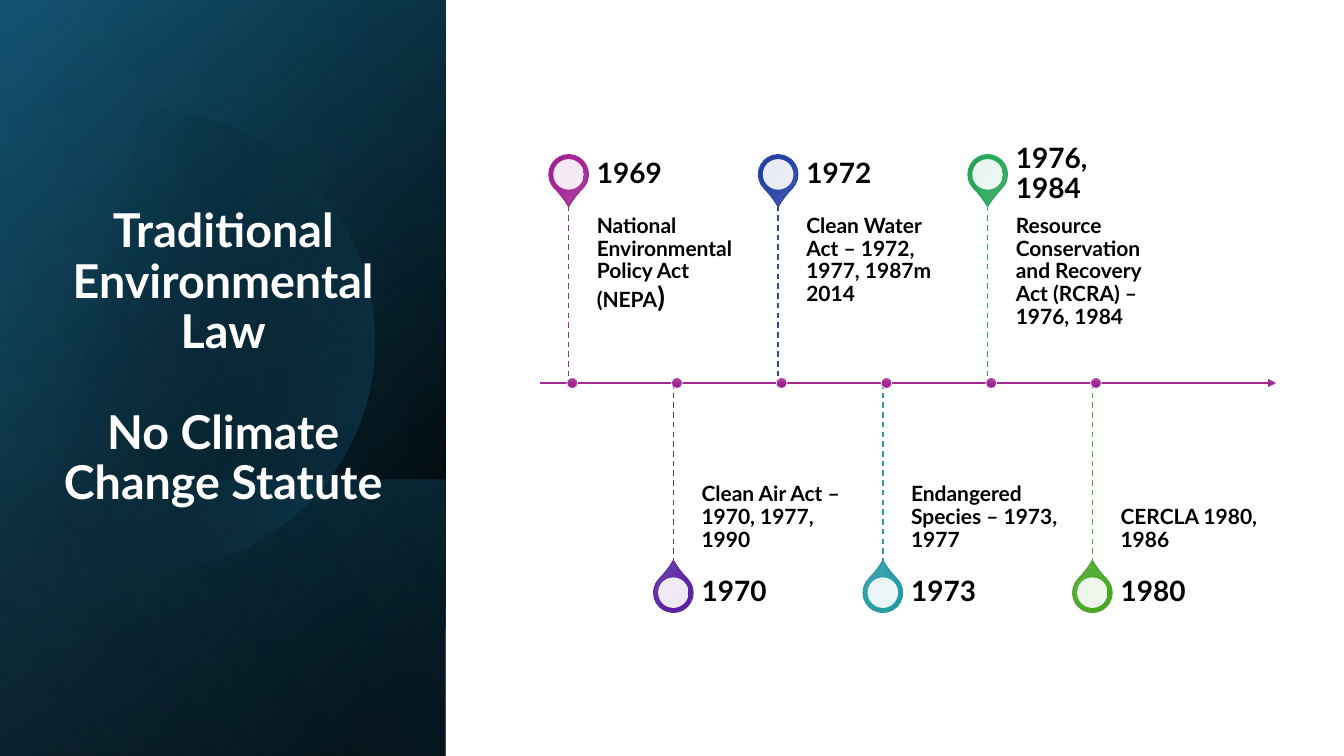
from math import acos, cos, sin

from lxml.etree import SubElement
from pptx import Presentation
from pptx.dml.color import RGBColor
from pptx.enum.dml import MSO_LINE
from pptx.enum.shapes import MSO_CONNECTOR, MSO_SHAPE
from pptx.enum.text import MSO_ANCHOR, PP_ALIGN
from pptx.oxml import parse_xml
from pptx.oxml.ns import nsdecls, qn
from pptx.util import Cm, Pt

FONT = "Lato"
BLACK = RGBColor(0x00, 0x00, 0x00)
WHITE = RGBColor(0xFF, 0xFF, 0xFF)
NAVY = RGBColor(0x10, 0x48, 0x62)
TEAL_BLUE = RGBColor(0x15, 0x60, 0x82)
SKY = RGBColor(0x46, 0xB1, 0xE1)
# Each set: line colour, then light, middle and dark gradient colours
MAGENTA = [RGBColor.from_string(c) for c in ("A02B93", "AC53A0", "A62598", "991C8B")]
PURPLE = [RGBColor.from_string(c) for c in ("5F2CA1", "7353AD", "5E26A7", "531C9A")]
BLUE = [RGBColor.from_string(c) for c in ("2C49A3", "5363AF", "2645A9", "1D3B9B")]
TURQUOISE = [RGBColor.from_string(c) for c in ("2D9AA4", "53A7B0", "279FAA", "1D929D")]
GREEN = [RGBColor.from_string(c) for c in ("2DA65F", "54B173", "27AC5E", "1E9E52")]
LIME = [RGBColor.from_string(c) for c in ("4EA72E", "66B354", "4BAD28", "409F1E")]


def paint(shape, stops, angle):
    """Give a shape a linear gradient of (position, colour, opacity), no line, no shadow."""
    shape.shadow.inherit = False
    shape.line.fill.background()
    shape.fill.background()
    stop_xml = "".join(
        f'<a:gs pos="{position * 1000}"><a:srgbClr val="{color}">'
        f'<a:alpha val="{opacity * 1000}"/></a:srgbClr></a:gs>'
        for position, color, opacity in stops)
    gradient = parse_xml(
        f'<a:gradFill {nsdecls("a")} rotWithShape="1"><a:gsLst>{stop_xml}</a:gsLst>'
        f'<a:lin ang="{angle * 60000}" scaled="0"/></a:gradFill>')
    properties = shape.element.spPr
    properties.replace(properties.find(qn("a:noFill")), gradient)


def add_label(left, top, height, insets, anchor, text, size):
    """Add a timeline text box and return its paragraph."""
    frame = timeline.add_textbox(Cm(left), Cm(top), Cm(3.91), Cm(height)).text_frame
    frame.word_wrap = True
    frame.vertical_anchor = anchor
    frame.margin_left = 0
    frame.margin_top, frame.margin_right, frame.margin_bottom = [Cm(i) for i in insets]
    paragraph = frame.paragraphs[0]
    paragraph.add_run().text = text
    paragraph.line_spacing = 0.9
    paragraph.font.name, paragraph.font.size, paragraph.font.bold = FONT, Pt(size), True
    paragraph.font.color.rgb = BLACK
    return paragraph


prs = Presentation()
prs.slide_width, prs.slide_height = Cm(33.87), Cm(19.05)
slide = prs.slides.add_slide(prs.slide_layouts[6])

# Left panel: turned rectangles (left, top, width), with a disc under the last one
PANEL_WIDTH = 11.23
full_panel = (-3.91, 3.91, 19.05)
layers = [
    (full_panel, [(8, BLACK, 100), (100, NAVY, 100)], 50),
    (full_panel, [(0, BLACK, 0), (99, TEAL_BLUE, 46)], 30),
    ((2.13, 9.96, 6.96), [(2, TEAL_BLUE, 29), (100, BLACK, 30)], 130),
    (None, [(29, BLACK, 0), (100, TEAL_BLUE, 43)], 14),
    (full_panel, [(0, BLACK, 0), (99, SKY, 11)], 120),
]
disc_x, disc_y, disc_radius = 3.61, 8.59, 5.82
disc_end = acos(-disc_x / disc_radius)  # the disc is cut at the slide edge
disc_angles = [disc_end * step / 60 for step in range(-60, 61)]
disc_points = [(Cm(disc_x + disc_radius * cos(a)), Cm(disc_y + disc_radius * sin(a)))
               for a in disc_angles]
for box, stops, angle in layers:
    if box:
        left, top, width = box
        layer = slide.shapes.add_shape(
            MSO_SHAPE.RECTANGLE, Cm(left), Cm(top), Cm(width), Cm(PANEL_WIDTH))
        layer.rotation = 90
        layer.element.spPr.xfrm.set("flipH", "1")
    else:
        outline = slide.shapes.build_freeform(*disc_points[0])
        outline.add_line_segments(disc_points[1:], close=True)
        layer = outline.convert_to_shape()
    paint(layer, stops, angle)

title = slide.shapes.add_textbox(Cm(1.3), Cm(6.32), Cm(8.66), Cm(6.65)).text_frame
title.word_wrap = True
title.vertical_anchor = MSO_ANCHOR.BOTTOM
title.text = "Traditional Environmental Law\nNo Climate Change Statute"
for paragraph in title.paragraphs:
    paragraph.alignment = PP_ALIGN.CENTER
    paragraph.line_spacing = 0.9
    paragraph.font.name, paragraph.font.size, paragraph.font.bold = FONT, Pt(33.3), True
    paragraph.font.color.rgb = WHITE
title.paragraphs[1].space_before = Pt(36)

# Timeline: events alternate above and below the axis
AXIS_Y, FIRST_X, STEP_X = 9.65, 14.33, 2.64
YEAR_HEIGHT, ACT_HEIGHT = 1.57, 4.5
PIN, WINDOW, DOT = 0.99, 0.77, 0.27
events = [
    ("1969", "National Environmental Policy Act (NEPA", MAGENTA),
    ("1970", "Clean Air Act – 1970, 1977, 1990", PURPLE),
    ("1972", "Clean Water Act – 1972, 1977, 1987m 2014", BLUE),
    ("1973", "Endangered Species – 1973, 1977", TURQUOISE),
    ("1976, 1984", "Resource Conservation and Recovery Act (RCRA) – 1976, 1984", GREEN),
    ("1980", "CERCLA 1980, 1986", LIME),
]
timeline = slide.shapes.add_group_shape().shapes
axis = timeline.add_connector(
    MSO_CONNECTOR.STRAIGHT, Cm(13.61), Cm(AXIS_Y), Cm(32.16), Cm(AXIS_Y))
axis.line.color.rgb = MAGENTA[0]
axis.line.width = Pt(1.5)
SubElement(axis.element.spPr.find(qn("a:ln")), qn("a:tailEnd"), type="triangle")
connectors = [axis]

for index, (year, act, colors) in enumerate(events):
    x = FIRST_X + index * STEP_X
    if index % 2 == 0:
        year_top, act_top, stem_end, turn = 3.61, 5.18, 5.18, 135
        act_insets, act_anchor = (0.25, 0.25, 0.41), MSO_ANCHOR.TOP
    else:
        year_top, act_top, stem_end, turn = 14.15, AXIS_Y, 14.15, 315
        act_insets, act_anchor = (0.41, 0, 0.25), MSO_ANCHOR.BOTTOM
    pin_y = year_top + YEAR_HEIGHT / 2

    pin = timeline.add_shape(
        MSO_SHAPE.TEAR, Cm(x - PIN / 2), Cm(pin_y - PIN / 2), Cm(PIN), Cm(PIN))
    pin.adjustments[0] = 1.15
    pin.rotation = turn
    paint(pin, [(50 * i, color, 100) for i, color in enumerate(colors[1:])], 90)
    pin.line.color.rgb = colors[0]
    pin.line.width = Pt(1)

    window = timeline.add_shape(
        MSO_SHAPE.OVAL, Cm(x - WINDOW / 2), Cm(pin_y - WINDOW / 2), Cm(WINDOW), Cm(WINDOW))
    paint(window, [(0, WHITE, 90), (100, WHITE, 90)], 0)

    act_text = add_label(x + 0.71, act_top, ACT_HEIGHT, act_insets, act_anchor, act, 15)
    if act.endswith("(NEPA"):
        bracket = act_text.add_run()
        bracket.text = ")"
        bracket.font.size = Pt(20)
    add_label(x + 0.71, year_top, YEAR_HEIGHT, (0, 0.36, 0), MSO_ANCHOR.MIDDLE, year, 20)

    stem = timeline.add_connector(
        MSO_CONNECTOR.STRAIGHT, Cm(x), Cm(min(stem_end, AXIS_Y)),
        Cm(x), Cm(max(stem_end, AXIS_Y)))
    stem.line.color.rgb = colors[0]
    stem.line.width = Pt(1)
    stem.line.dash_style = MSO_LINE.DASH
    connectors.append(stem)

    dot = timeline.add_shape(
        MSO_SHAPE.OVAL, Cm(x + 0.09 - DOT / 2), Cm(AXIS_Y - DOT / 2), Cm(DOT), Cm(DOT))
    paint(dot, [(50 * i, color, 100) for i, color in enumerate(MAGENTA[1:])], 90)
    dot.line.color.rgb = WHITE
    dot.line.width = Pt(0.5)

for connector in connectors:
    SubElement(connector.element.spPr, qn("a:effectLst"))

prs.save("out.pptx")
